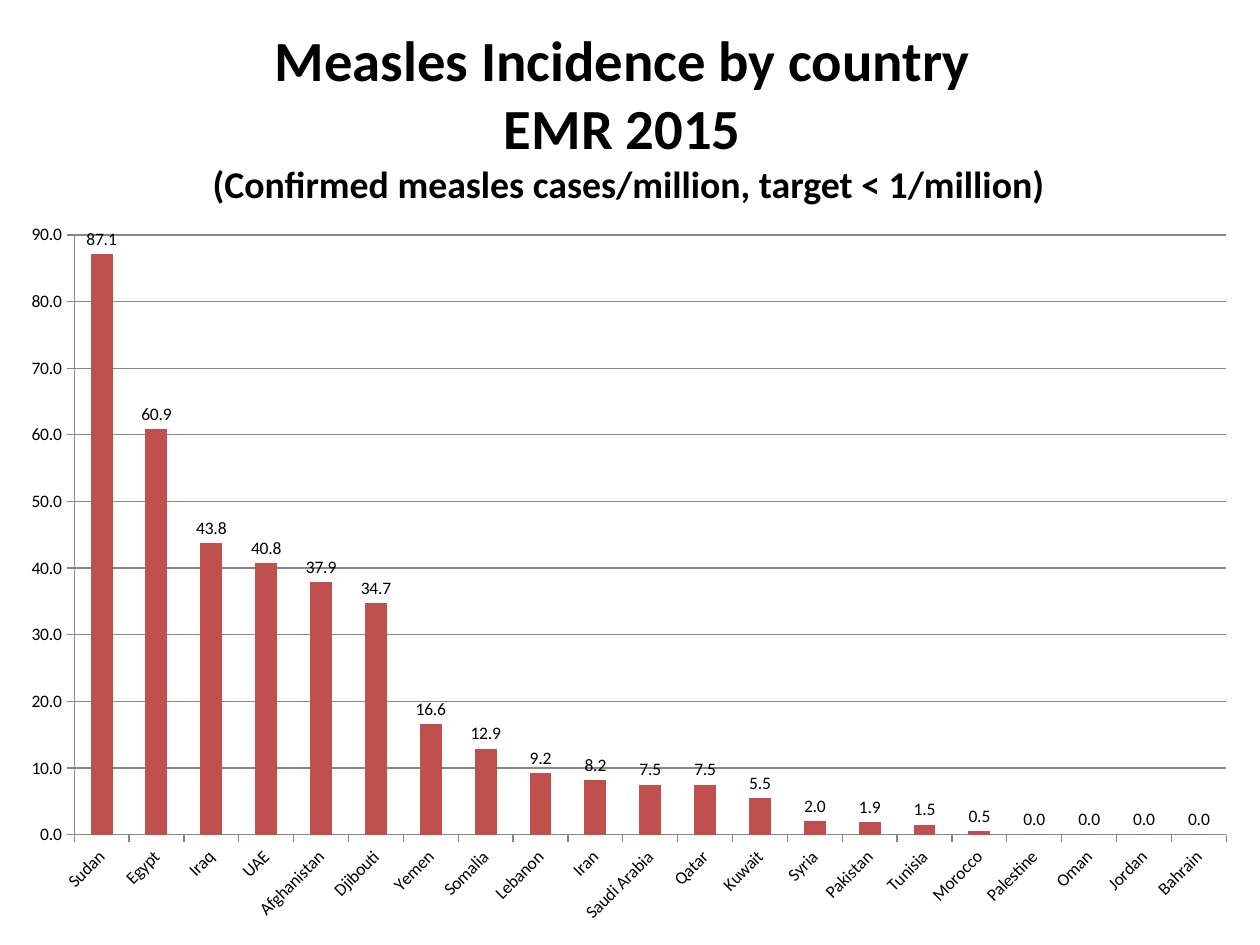
from pptx import Presentation
from pptx.chart.data import CategoryChartData
from pptx.dml.color import RGBColor
from pptx.enum.chart import XL_CHART_TYPE, XL_LABEL_POSITION, XL_TICK_MARK
from pptx.enum.text import MSO_ANCHOR, MSO_AUTO_SIZE, PP_ALIGN
from pptx.oxml import parse_xml
from pptx.oxml.ns import nsdecls
from pptx.util import Inches, Pt

BLACK = RGBColor(0x00, 0x00, 0x00)
GREY = RGBColor(0x86, 0x86, 0x86)
RED = RGBColor(0xC0, 0x50, 0x4D)
FONT = "Calibri"

TITLE_LINES = [
    ("Measles Incidence by country ", 32.4),
    ("EMR 2015 ", 32.4),
    ("(Confirmed measles cases/million, target < 1/million)", 21.6),
]
INCIDENCE = {
    "Sudan": 87.1, "Egypt": 60.9, "Iraq": 43.8, "UAE": 40.8,
    "Afghanistan": 37.9, "Djibouti": 34.7, "Yemen": 16.6, "Somalia": 12.9,
    "Lebanon": 9.2, "Iran": 8.2, "Saudi Arabia": 7.5, "Qatar": 7.5,
    "Kuwait": 5.5, "Syria": 2.0, "Pakistan": 1.9, "Tunisia": 1.5,
    "Morocco": 0.5, "Palestine": 0, "Oman": 0, "Jordan": 0, "Bahrain": 0,
}


def add_title(slide, left, top, width, height):
    sp = slide.shapes.title
    sp.left, sp.top, sp.width, sp.height = left, top, width, height
    tf = sp.text_frame
    tf.word_wrap = True
    tf.auto_size = MSO_AUTO_SIZE.NONE
    tf.vertical_anchor = MSO_ANCHOR.MIDDLE
    p = tf.paragraphs[0]
    p.text = "\v".join(line for line, _ in TITLE_LINES)
    p.alignment = PP_ALIGN.CENTER
    for r, (_, size) in zip(p.runs, TITLE_LINES):
        r.font.name = FONT
        r.font.size = Pt(size)
        r.font.bold = True
        r.font.color.rgb = BLACK


def set_plot_area(chart, x, y, w, h):
    """Fix the inner plot area, in fractions of the chart."""
    plot_area = chart._chartSpace.chart.plotArea
    for old in plot_area.findall("{*}layout"):
        plot_area.remove(old)
    plot_area.insert(0, parse_xml(
        f'<c:layout {nsdecls("c")}><c:manualLayout>'
        '<c:layoutTarget val="inner"/><c:xMode val="edge"/><c:yMode val="edge"/>'
        f'<c:x val="{x}"/><c:y val="{y}"/><c:w val="{w}"/><c:h val="{h}"/>'
        '</c:manualLayout></c:layout>'))


def add_incidence_chart(slide, left, top, width, height):
    data = CategoryChartData(number_format="0.0")
    data.categories = list(INCIDENCE)
    data.add_series("Series 1", list(INCIDENCE.values()))
    chart = slide.shapes.add_chart(
        XL_CHART_TYPE.COLUMN_CLUSTERED, left, top, width, height, data).chart
    chart.has_title = False
    chart.has_legend = False
    chart.font.name = FONT
    chart.font.size = Pt(10)
    chart.font.color.rgb = BLACK
    set_plot_area(chart, 0.048, 0.02, 0.937, 0.828)

    # Columns and their labels
    plot = chart.plots[0]
    plot.gap_width = 150
    plot.vary_by_categories = False
    fill = plot.series[0].format.fill
    fill.solid()
    fill.fore_color.rgb = RED
    plot.has_data_labels = True
    labels = plot.data_labels
    labels.show_value = True
    labels.number_format = "0.0"
    labels.number_format_is_linked = False
    labels.position = XL_LABEL_POSITION.OUTSIDE_END

    # Axes
    cat_axis, val_axis = chart.category_axis, chart.value_axis
    for axis in (cat_axis, val_axis):
        axis.major_tick_mark = XL_TICK_MARK.OUTSIDE
        axis.format.line.color.rgb = GREY
        axis.format.line.width = Pt(0.75)
    cat_axis.tick_labels.font.size = Pt(10)
    cat_axis._element.txPr.bodyPr.set("rot", "-2700000")  # 45° upwards
    val_axis.minimum_scale = 0
    val_axis.maximum_scale = 90
    val_axis.major_unit = 10
    val_axis.tick_labels.number_format = "0.0"
    val_axis.tick_labels.number_format_is_linked = False
    val_axis.has_major_gridlines = True
    grid = val_axis.major_gridlines.format.line
    grid.color.rgb = GREY
    grid.width = Pt(0.75)


def main():
    prs = Presentation()
    prs.slide_width, prs.slide_height = Inches(10), Inches(7.5)
    slide = prs.slides.add_slide(prs.slide_layouts[5])  # title only
    add_title(slide, Inches(-0.01), Inches(0.29), Inches(10), Inches(1.25))
    add_incidence_chart(slide, Inches(0.12), Inches(1.75), Inches(9.76), Inches(5.75))
    prs.save("out.pptx")


if __name__ == "__main__":
    main()
